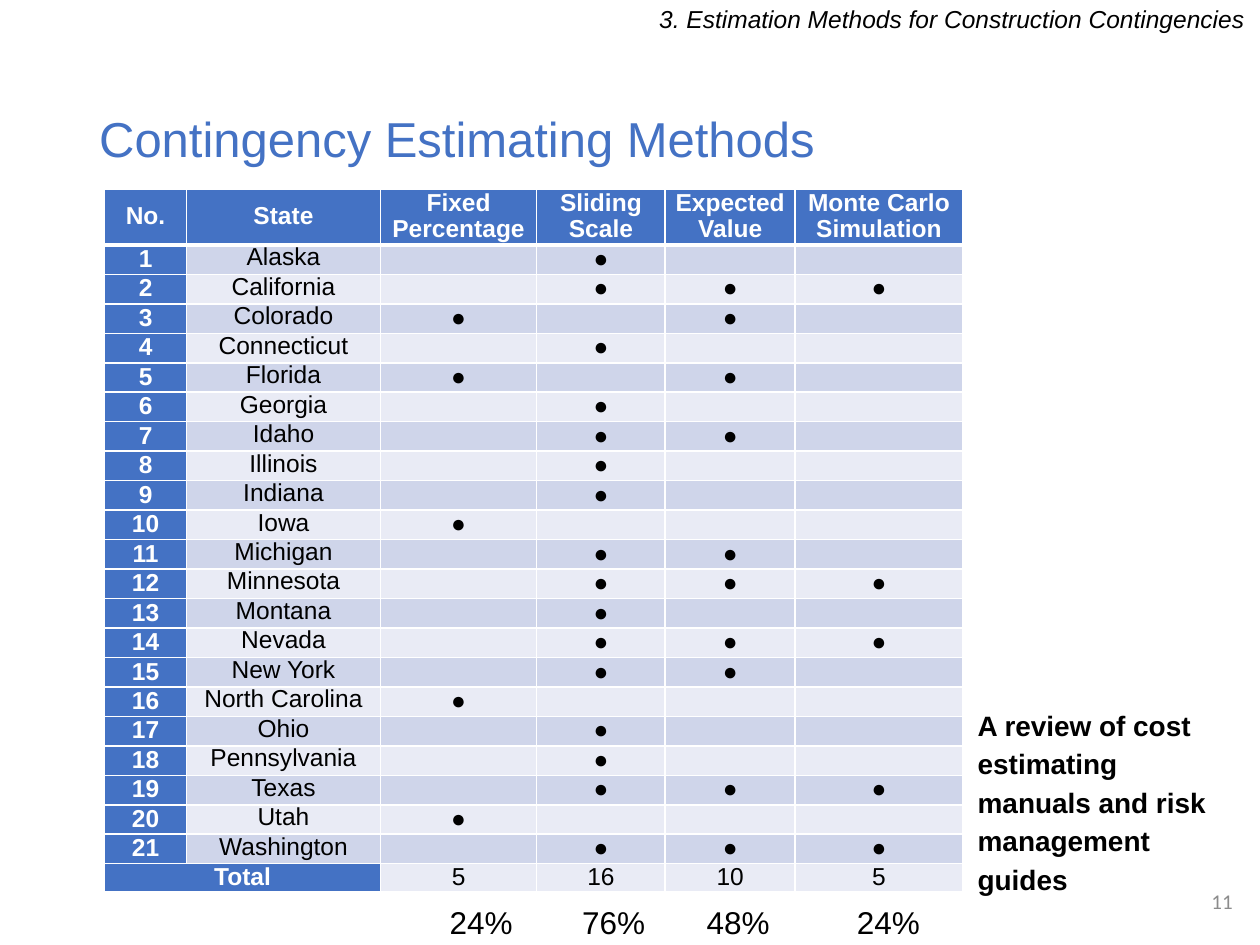
from lxml import etree
from pptx import Presentation
from pptx import util as u
from pptx.dml.color import RGBColor
from pptx.enum import text
from pptx.oxml.ns import qn

# Content
SECTION = "3. Estimation Methods for Construction Contingencies"
TITLE = "Contingency Estimating Methods"
NOTE = "A review of cost estimating manuals and risk management guides"
PAGE_NUMBER = "11"
HEADERS = ["No.", "State", "Fixed Percentage", "Sliding Scale",
           "Expected Value", "Monte Carlo Simulation"]
# Methods per state: F fixed, S sliding, E expected, M Monte Carlo
METHODS = "FSEM"
STATES = [
    ("Alaska", "S"), ("California", "SEM"), ("Colorado", "FE"),
    ("Connecticut", "S"), ("Florida", "FE"), ("Georgia", "S"),
    ("Idaho", "SE"), ("Illinois", "S"), ("Indiana", "S"), ("Iowa", "F"),
    ("Michigan", "SE"), ("Minnesota", "SEM"), ("Montana", "S"),
    ("Nevada", "SEM"), ("New York", "SE"), ("North Carolina", "F"),
    ("Ohio", "S"), ("Pennsylvania", "S"), ("Texas", "SEM"), ("Utah", "F"),
    ("Washington", "SEM"),
]
BLUE, WHITE, BLACK, GREY = "4472C4", "FFFFFF", "000000", "8C8C8C"
BANDS = ["CFD5EA", "E9EBF5"]

# Measures in centimetres
TABLE_LEFT, TABLE_TOP, TABLE_HEIGHT, HEADER_HEIGHT = 2.11, 3.81, 13.33, 1.08
COLUMNS = [1.65, 3.91, 3.15, 2.59, 2.62, 3.38]
SHARE_TABS = [1.65, 4.32, 6.83, 9.86]

ALIGN = {"l": text.PP_ALIGN.LEFT, "c": text.PP_ALIGN.CENTER, "r": text.PP_ALIGN.RIGHT}


def color(value):
    return RGBColor.from_string(value)


def write(frame, words, size=14, ink=BLACK, bold=False, italic=False,
          font="Arial", align="l", spacing=None, before=0, after=0):
    para = frame.paragraphs[0]
    para.alignment = ALIGN[align]
    para.space_before, para.space_after = u.Pt(before), u.Pt(after)
    if spacing:
        para.line_spacing = spacing
    if words:
        span = para.add_run()
        span.text = words
        span.font.name, span.font.size = font, u.Pt(size)
        span.font.bold, span.font.italic = bold, italic
        span.font.color.rgb = color(ink)
    else:  # an empty cell still takes the height of its font
        etree.SubElement(para._p, qn("a:endParaRPr"), sz=str(size * 100))
    return para


def add_text(page, words, left, top, width, height, middle=False, **style):
    box = page.shapes.add_textbox(u.Cm(left), u.Cm(top), u.Cm(width), u.Cm(height))
    frame = box.text_frame
    frame.word_wrap = True
    frame.vertical_anchor = text.MSO_ANCHOR.MIDDLE if middle else text.MSO_ANCHOR.TOP
    return write(frame, words, **style)


def add_border(cell, side, points):
    line = etree.Element(qn("a:" + side), w=str(u.Pt(points)))
    fill = etree.SubElement(line, qn("a:solidFill"))
    etree.SubElement(fill, qn("a:srgbClr"), val=WHITE)
    return line


def fill_cell(cell, words, fill, bottom=1, top=1, middle=True, **style):
    cell.margin_left = cell.margin_right = u.Cm(0.18)
    cell.margin_top = cell.margin_bottom = 0
    cell.vertical_anchor = text.MSO_ANCHOR.MIDDLE if middle else text.MSO_ANCHOR.TOP
    write(cell.text_frame, words, align="c", spacing=0.95, **style)
    cell.fill.solid()
    cell.fill.fore_color.rgb = color(fill)
    widths = {"lnL": 1, "lnR": 1, "lnT": top, "lnB": bottom}
    properties = cell._tc.get_or_add_tcPr()
    for position, (side, points) in enumerate(widths.items()):
        properties.insert(position, add_border(cell, side, points))


def add_methods_table(page, totals):
    row_count = len(STATES) + 2
    table = page.shapes.add_table(
        row_count, len(COLUMNS), u.Cm(TABLE_LEFT), u.Cm(TABLE_TOP),
        u.Cm(sum(COLUMNS)), u.Cm(TABLE_HEIGHT)).table
    for column, width in zip(table.columns, COLUMNS):
        column.width = u.Cm(width)
    for row in table.rows:
        row.height = u.Cm((TABLE_HEIGHT - HEADER_HEIGHT) / (row_count - 1))
    table.rows[0].height = u.Cm(HEADER_HEIGHT)

    rows = [HEADERS]
    for number, (state, used) in enumerate(STATES, 1):
        rows.append([str(number), state] + ["●" if m in used else "" for m in METHODS])
    rows.append(["Total", ""] + [str(total) for total in totals])

    last = row_count - 1
    table.cell(last, 0).merge(table.cell(last, 1))
    for r, words in enumerate(rows):
        for c, word in enumerate(words):
            strong = r == 0 or c == 0
            fill_cell(table.cell(r, c), word,
                      BLUE if strong else BANDS[(r - 1) % 2],
                      bottom=3 if r == 0 else 1, top=3 if r == 1 else 1,
                      middle=strong or c != 1,
                      ink=WHITE if strong else BLACK, bold=strong)


def main():
    deck = Presentation()
    deck.slide_width, deck.slide_height = u.Cm(25.4), u.Cm(19.05)
    page = deck.slides.add_slide(deck.slide_layouts[6])
    totals = [sum(m in used for _, used in STATES) for m in METHODS]

    add_text(page, PAGE_NUMBER, 19.38, 17.65, 5.72, 1.02, middle=True,
             size=12, ink=GREY, font="Calibri", align="r")
    add_text(page, TITLE, 1.75, 1.02, 21.9, 3.68, middle=True,
             size=28, ink=BLUE, spacing=0.9)
    add_methods_table(page, totals)
    add_text(page, NOTE, 19.46, 14.05, 5.64, 4.11,
             size=16, bold=True, spacing=1.15, before=18, after=6)

    # Share of states per method, on centred tab stops
    shares = "".join(f"\t{total / len(STATES):.0%}" for total in totals)
    para = add_text(page, shares, 7.8, 18.08, 12.01, 1.02, middle=True, size=18)
    stops = etree.SubElement(para._p.get_or_add_pPr(), qn("a:tabLst"))
    for stop in SHARE_TABS:
        etree.SubElement(stops, qn("a:tab"), pos=str(u.Cm(stop)), algn="ctr")

    add_text(page, SECTION, 12.07, 0.03, 13.28, 1.02,
             italic=True, align="r", spacing=0.9, before=10)
    deck.save("out.pptx")


if __name__ == "__main__":
    main()
